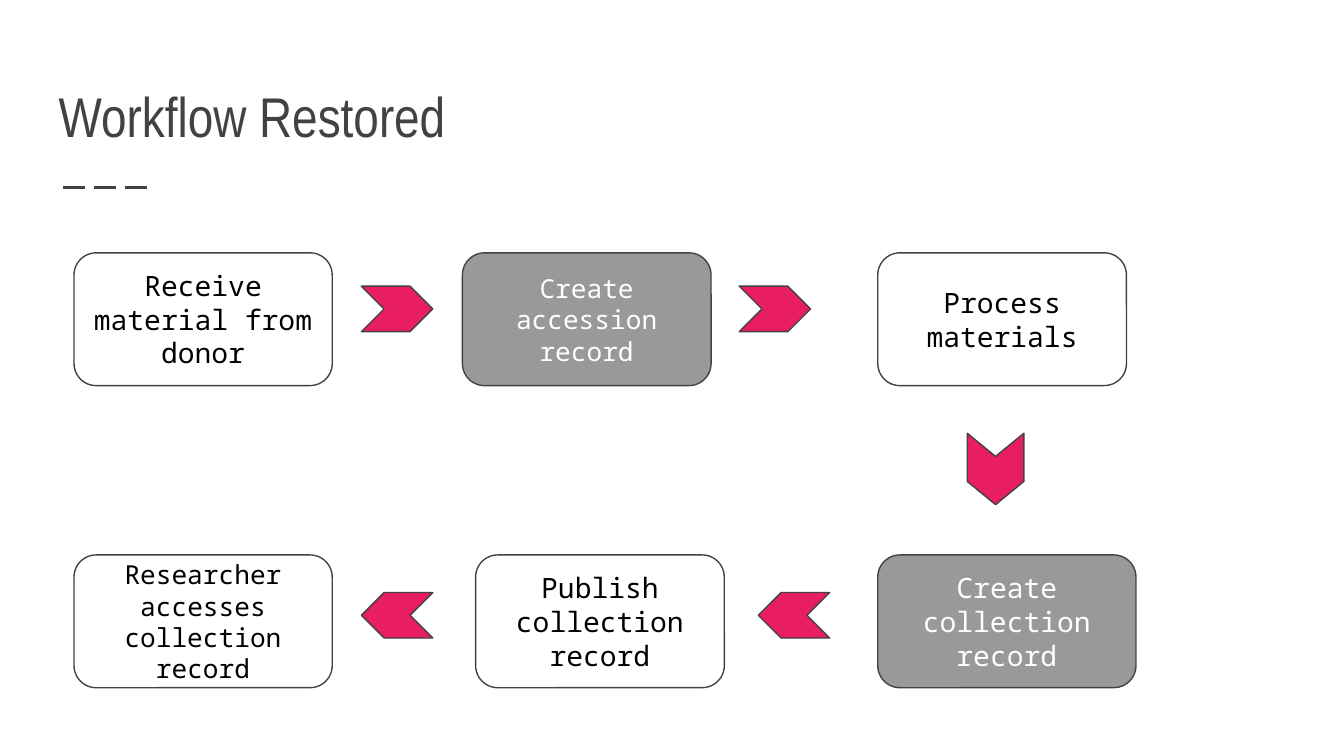
from lxml.etree import SubElement
from pptx import Presentation
from pptx.dml.color import RGBColor
from pptx.enum.dml import MSO_LINE
from pptx.enum.shapes import MSO_CONNECTOR as Connector, MSO_SHAPE as Shape
from pptx.enum.text import MSO_ANCHOR as Anchor, PP_ALIGN as Align
from pptx.oxml.ns import qn
from pptx.util import Cm, Pt

COLORS = {
    "ink": "424242",
    "manual": "FFFFFF",
    "system": "999999",
    "arrow": "E91D63",
    "on_manual": "000000",
    "on_system": "FFFFFF",
}
INSET = Cm(0.25)
FRAME_FORMAT = {
    "word_wrap": True,
    "margin_left": INSET,
    "margin_top": INSET,
    "margin_right": INSET,
    "margin_bottom": INSET,
}
COLUMNS = (1.4, 8.74, 16.59)
ROWS = (4.78, 10.49)
NARROW, WIDE, STEP_HEIGHT = 4.7, 4.88, 2.51
ARROW_LENGTH, ARROW_HEIGHT = 1.35, 0.86
ARROW_ROWS = (5.41, 11.2)


def color(name):
    return RGBColor.from_string(COLORS[name])


def set_format(target, values):
    for name, value in values.items():
        setattr(target, name, value)


def write(frame, words, anchor, align, font_name, size, ink):
    set_format(frame, {**FRAME_FORMAT, "vertical_anchor": anchor})
    paragraph = frame.paragraphs[0]
    paragraph.alignment = align
    run = paragraph.add_run()
    run.text = words
    set_format(run.font, {"name": font_name, "size": Pt(size)})
    run.font.color.rgb = color(ink)


def add_outlined(slide, preset, left, top, width, height, fill):
    outlined = slide.shapes.add_shape(
        preset, Cm(left), Cm(top), Cm(width), Cm(height))
    outlined.shadow.inherit = False
    outlined.fill.solid()
    outlined.fill.fore_color.rgb = color(fill)
    outlined.line.color.rgb = color("ink")
    outlined.line.width = Pt(0.75)
    return outlined


def add_title(slide, words):
    title = slide.shapes.add_textbox(Cm(0.86), Cm(1.04), Cm(23.67), Cm(2.03))
    write(title.text_frame, words, Anchor.BOTTOM, Align.LEFT,
          "Arial Narrow", 30, "ink")


def add_dashes(slide):
    dashes = slide.shapes.add_connector(
        Connector.STRAIGHT, Cm(1.19), Cm(3.54), Cm(2.9), Cm(3.54))
    set_format(dashes.line, {"width": Pt(1.5), "dash_style": MSO_LINE.LONG_DASH})
    dashes.line.color.rgb = color("ink")
    SubElement(dashes._element.spPr, qn("a:effectLst"))


def add_step(slide, words, left, top, width, kind, size):
    step = add_outlined(slide, Shape.FLOWCHART_ALTERNATE_PROCESS,
                        left, top, width, STEP_HEIGHT, kind)
    write(step.text_frame, words, Anchor.MIDDLE, Align.CENTER,
          "Noto Sans Mono", size, "on_" + kind)


def add_arrow(slide, left, top, rotation, height=ARROW_HEIGHT, notch=0.5):
    arrow = add_outlined(slide, Shape.CHEVRON, left, top,
                         ARROW_LENGTH, height, "arrow")
    arrow.adjustments[0] = notch
    arrow.rotation = rotation


def main():
    deck = Presentation()
    set_format(deck, {"slide_width": Cm(25.4), "slide_height": Cm(14.29)})
    slide = deck.slides.add_slide(deck.slide_layouts[6])

    add_dashes(slide)
    add_title(slide, "Workflow Restored")

    first, second, third = COLUMNS
    upper, lower = ROWS
    steps = (
        ("Receive material from donor", first, upper, WIDE, "manual", 15),
        ("Create accession record", second, upper, NARROW, "system", 14),
        ("Process materials", third, upper, NARROW, "manual", 15),
        ("Create collection record", third, lower, WIDE, "system", 15),
        ("Publish collection record", second + 0.25, lower, NARROW, "manual", 15),
        ("Researcher accesses collection record", first, lower, WIDE, "manual", 14),
    )
    for step in steps:
        add_step(slide, *step)

    for top, rotation, lefts in zip(ARROW_ROWS, (0, 180),
                                    ((6.83, 13.97), (14.33, 6.83))):
        for left in lefts:
            add_arrow(slide, left, top, rotation)
    add_arrow(slide, 18.14, 8.33, 90, height=1.07, notch=0.41)

    deck.save("out.pptx")


if __name__ == "__main__":
    main()
